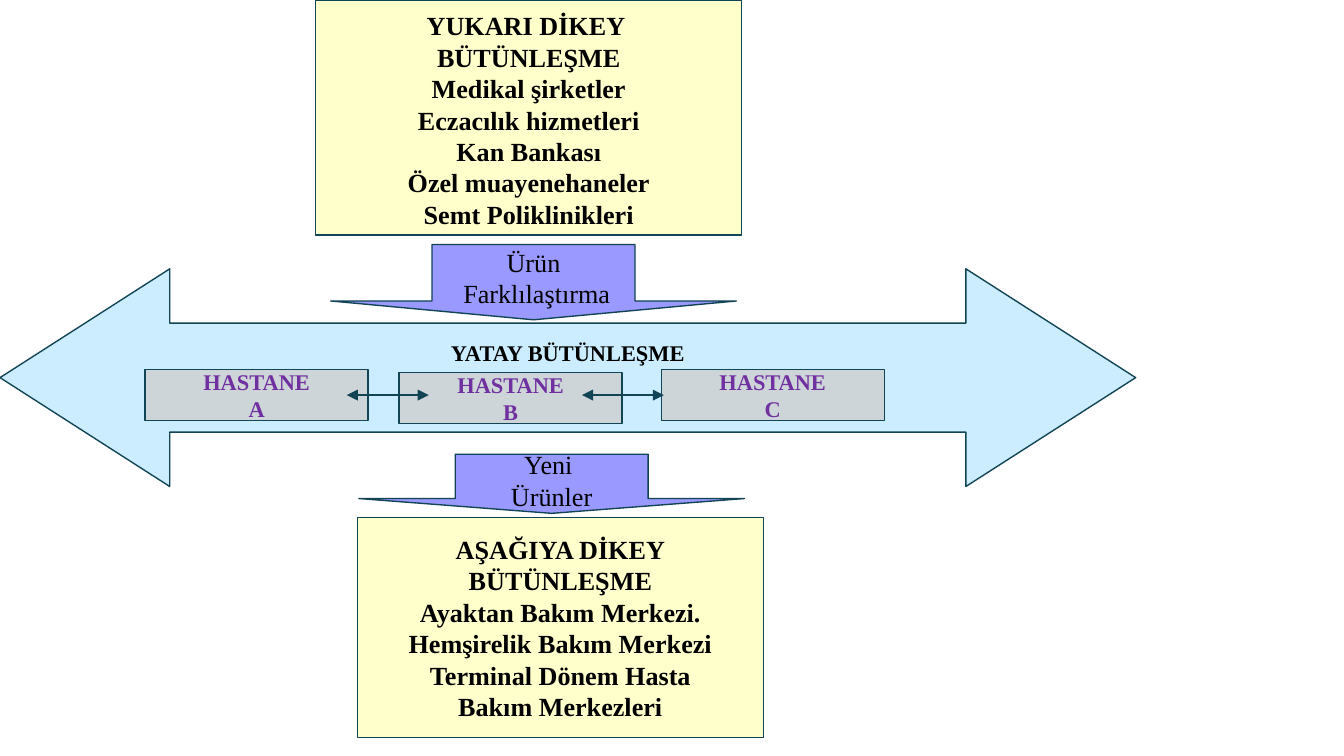
from lxml import etree
from pptx import Presentation
from pptx import util as u
from pptx.dml import color
from pptx.enum import shapes, text
from pptx.oxml import ns

COLORS = {
    "outline": "114454",
    "integration": "FFFFCC",
    "horizontal": "CCECFF",
    "product": "9999FF",
    "hospital": "CED5D8",
    "hospital_text": "7030A0",
    "text": "000000",
}
FONT = "Times New Roman"


def rgb(name):
    """Return the named colour."""
    return color.RGBColor.from_string(COLORS[name])


def write_text(shape, lines, size=14, bold=False, ink="text", top=0.05, bottom=0.05):
    """Write centred lines, one per paragraph, in the middle of a shape."""
    frame = shape.text_frame
    frame.word_wrap = False
    frame.vertical_anchor = text.MSO_ANCHOR.MIDDLE
    frame.margin_top, frame.margin_bottom = u.Inches(top), u.Inches(bottom)
    for index, line in enumerate(lines):
        para = frame.add_paragraph() if index else frame.paragraphs[0]
        para.alignment = text.PP_ALIGN.CENTER
        span = para.add_run()
        span.text = line
        span.font.name = FONT
        span.font.size = u.Pt(size)
        span.font.bold = bold
        span.font.color.rgb = rgb(ink)


def add_block(page, kind, box, fill):
    """Add an outlined preset shape in the given box."""
    shape = page.shapes.add_shape(kind, *map(u.Inches, box))
    shape.shadow.inherit = False
    shape.fill.solid()
    shape.fill.fore_color.rgb = rgb(fill)
    shape.line.color.rgb = rgb("outline")
    shape.line.width = u.Pt(0.75)
    return shape


def add_integration(page, box, lines, top=0.05):
    """Add a vertical integration panel."""
    panel = add_block(page, shapes.MSO_SHAPE.RECTANGLE, box, "integration")
    write_text(panel, lines, bold=True, top=top)


def add_product_arrow(page, box, lines):
    """Add a flat downward arrow with its label."""
    arrow = add_block(page, shapes.MSO_SHAPE.DOWN_ARROW, box, "product")
    arrow.adjustments[0], arrow.adjustments[1] = 0.5, 0.25
    write_text(arrow, lines)


def add_horizontal_arrow(page, box):
    """Add the wide two-headed arrow with its heading above the hospitals."""
    arrow = add_block(page, shapes.MSO_SHAPE.LEFT_RIGHT_ARROW, box, "horizontal")
    arrow.adjustments[0], arrow.adjustments[1] = 0.5, 0.78
    write_text(arrow, ["YATAY BÜTÜNLEŞME"], size=12, bold=True, bottom=0.43)


def add_exchange(page, left, top, width):
    """Add a horizontal line with an arrowhead at both ends."""
    line = page.shapes.add_connector(
        shapes.MSO_CONNECTOR.STRAIGHT,
        *map(u.Inches, (left, top, left + width, top)),
    )
    line.line.color.rgb = rgb("outline")
    line.line.width = u.Pt(0.75)
    stroke = line.line._get_or_add_ln()
    for end in ("a:headEnd", "a:tailEnd"):
        etree.SubElement(stroke, ns.qn(end), type="triangle")
    etree.SubElement(line._element.spPr, ns.qn("a:effectLst"))


def add_hospitals(page, box):
    """Add the three hospitals and the exchanges between them."""
    left, top, width, height = box
    for letter, across, down in (("A", 0, 0), ("B", 1.89, 0.02), ("C", 3.84, 0)):
        hospital = add_block(
            page,
            shapes.MSO_SHAPE.RECTANGLE,
            (left + across, top + down, width, height),
            "hospital",
        )
        write_text(hospital, ["HASTANE", letter], size=12, bold=True, ink="hospital_text")
    for across in (1.5, 3.25):
        add_exchange(page, left + across, top + height / 2, 0.61)


def main():
    """Build and save the integration slide."""
    deck = Presentation()
    deck.slide_width = u.Inches(10)
    deck.slide_height = deck.slide_width * 9 // 16
    page = deck.slides.add_slide(deck.slide_layouts[6])
    add_integration(page, (2.35, 0, 3.17, 1.75), [
        "YUKARI DİKEY ",
        "BÜTÜNLEŞME",
        "Medikal şirketler",
        "Eczacılık hizmetleri",
        "Kan Bankası",
        "Özel muayenehaneler",
        "Semt Poliklinikleri",
    ], top=0.08)
    add_horizontal_arrow(page, (0, 2, 8.45, 1.62))
    add_product_arrow(page, (2.46, 1.82, 3.02, 0.56), ["Ürün", " Farklılaştırma"])
    add_product_arrow(page, (2.67, 3.38, 2.87, 0.44), ["Yeni ", "Ürünler"])
    add_integration(page, (2.66, 3.85, 3.02, 1.64), [
        "AŞAĞIYA DİKEY",
        "BÜTÜNLEŞME",
        "Ayaktan Bakım Merkezi.",
        "Hemşirelik Bakım Merkezi",
        "Terminal Dönem Hasta",
        "Bakım Merkezleri",
    ])
    add_hospitals(page, (1.08, 2.75, 1.66, 0.38))
    deck.save("out.pptx")


if __name__ == "__main__":
    main()
